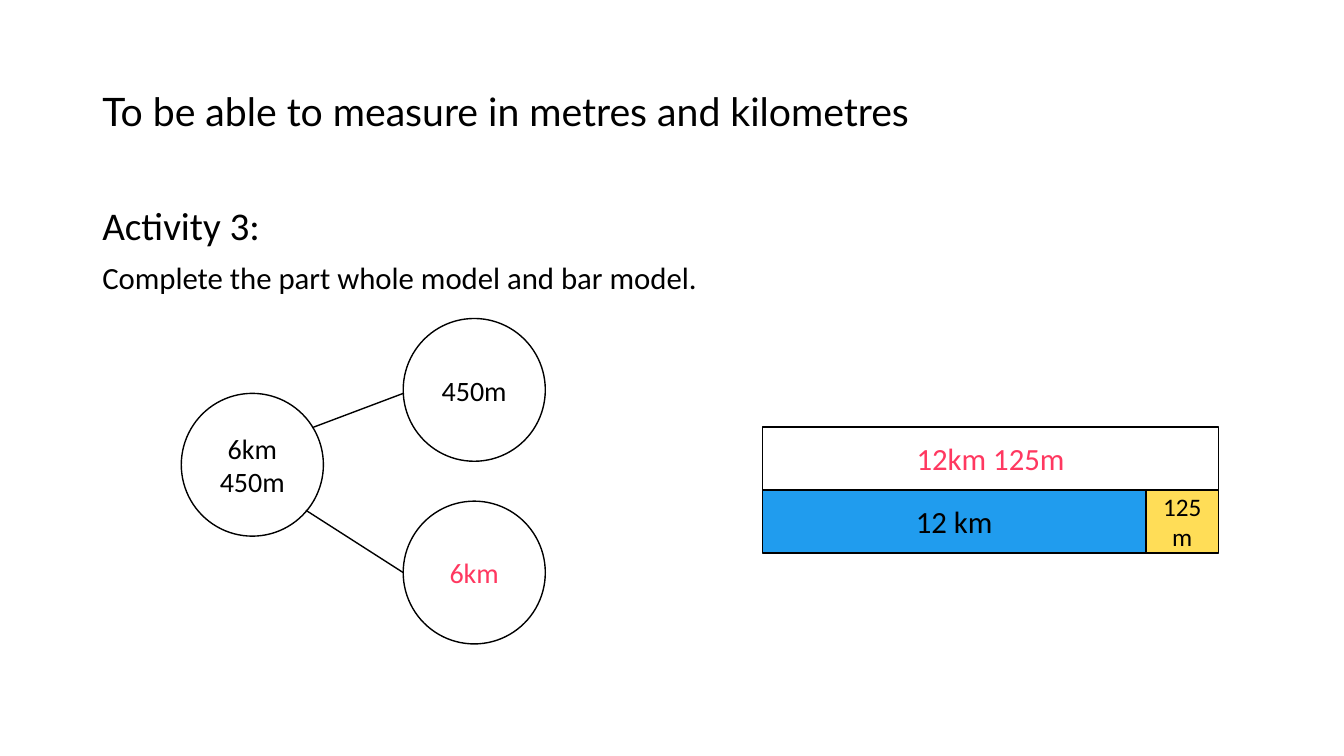
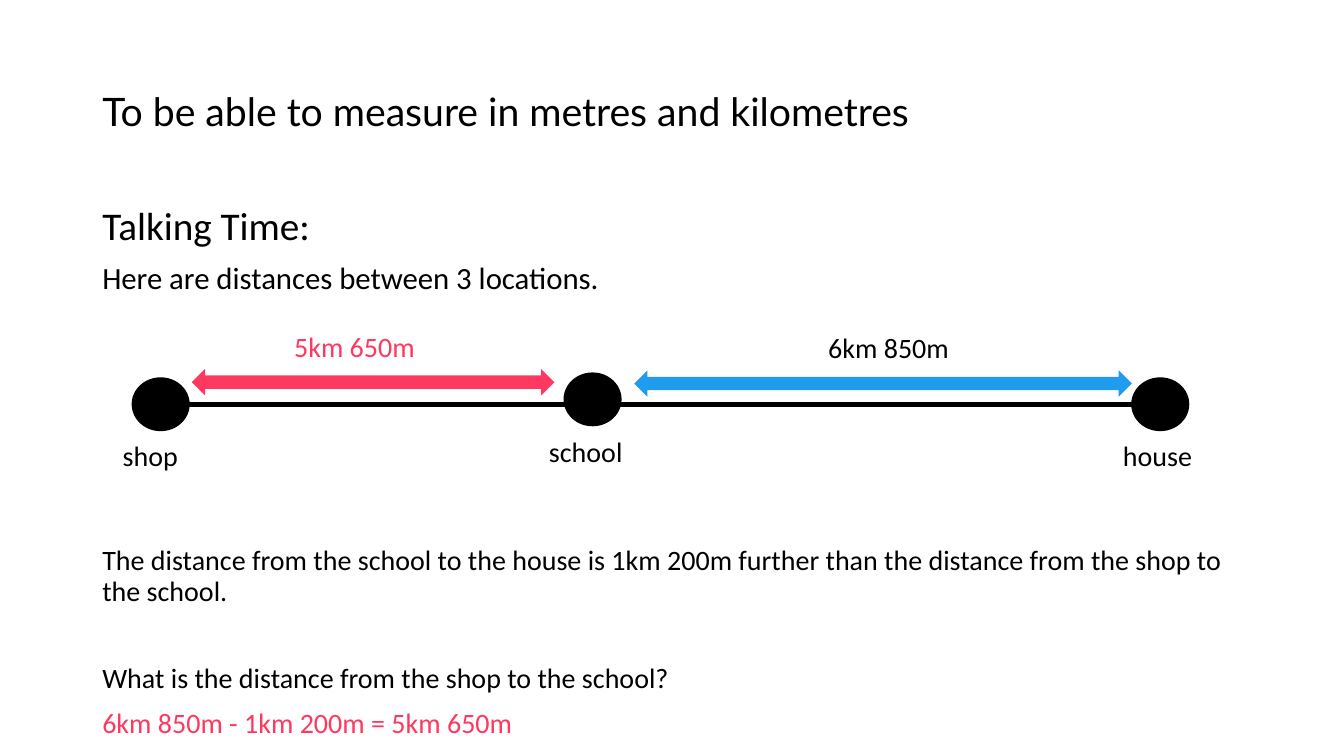
from pptx import Presentation
from pptx.dml.color import RGBColor
from pptx.enum.shapes import MSO_CONNECTOR, MSO_SHAPE as SHAPE
from pptx.enum.text import MSO_ANCHOR as ANCHOR, PP_ALIGN as ALIGN
from pptx.oxml.ns import qn
from pptx.util import Pt
from lxml import etree

BLACK = RGBColor(0x00, 0x00, 0x00)
WHITE = RGBColor(0xFF, 0xFF, 0xFF)
PINK = RGBColor(0xFF, 0x38, 0x60)
BLUE = RGBColor(0x20, 0x9C, 0xEE)
YELLOW = RGBColor(0xFF, 0xDD, 0x57)
TITLE_FONT, BODY_FONT = "Lato", "Calibri"
MARGIN = 66

# Content: paragraphs are (text, size, colour, space before)
TITLE = "To be able to measure in metres and kilometres"
ACTIVITY = [("Activity 3:", 28, BLACK, 0),
            ("Complete the part whole model and bar model.", 22, BLACK, 10)]
TALKING = [("Talking Time:", 28, BLACK, 0),
           ("Here are distances between 3 locations.", 22, BLACK, 10)]
QUESTION = [("The distance from the school to the house is 1km 200m further than "
             "the distance from the shop to the school.", 20, BLACK, 0),
            ("What is the distance from the shop to the school?", 20, BLACK, 41),
            ("6km 850m - 1km 200m = 5km 650m", 20, PINK, 10)]

# Part whole model: text, colour, left, top
CIRCLE_W, CIRCLE_H = 101.5, 102
CIRCLES = [("6km 450m", BLACK, 129.5, 281),
           ("450m", BLACK, 288, 227.5),
           ("6km", PINK, 288, 358)]
BRANCHES = [(223, 305.5, 288, 281), (288, 409, 218.5, 364.5)]

# Bar model: rows of (text, size, text colour, fill, width)
BAR_LEFT, BAR_TOP, BAR_H = 544.5, 305, 45
BAR_ROWS = [[("12km 125m", 22, PINK, WHITE, 326)],
            [("12 km", 22, BLACK, BLUE, 274), ("125m", 18, BLACK, YELLOW, 52)]]

# Route: place, dot left, dot top, label left, label width
DOT_W, DOT_H, LABEL_DROP, LABEL_H = 40.5, 37.5, 40, 31.5
ROAD = (115, 289, 824.5, 289)
PLACES = [("shop", 94.5, 270, 80.5, 68),
          ("house", 808.5, 270, 795, 75),
          ("school", 403, 266.5, 385, 84)]
# Distance, text colour, fill, arrow left, arrow top, arrow width, label left
ARROW_H, LABEL_RISE, DISTANCE_W = 19, 32, 154
DISTANCES = [("6km 850m", BLACK, BLUE, 453, 264.5, 355.5, 584.5),
             ("5km 650m", PINK, PINK, 137, 263.5, 259, 203)]


def write(frame, paragraphs, font=BODY_FONT, align=ALIGN.LEFT, spacing=None):
    frame.word_wrap = True
    for i, (text, size, colour, before) in enumerate(paragraphs):
        para = frame.add_paragraph() if i else frame.paragraphs[0]
        para.text = text
        para.alignment = align
        para.space_before = Pt(before)
        if spacing:
            para.line_spacing = spacing
        run_font = para.runs[0].font
        run_font.name, run_font.size = font, Pt(size)
        run_font.color.rgb = colour


def add_text(slide, paragraphs, left, top, width, height,
             anchor=ANCHOR.TOP, **style):
    box = slide.shapes.add_textbox(Pt(left), Pt(top), Pt(width), Pt(height))
    box.text_frame.vertical_anchor = anchor
    write(box.text_frame, paragraphs, **style)


def add_figure(slide, kind, left, top, width, height, fill, line=BLACK, label=None):
    figure = slide.shapes.add_shape(kind, Pt(left), Pt(top), Pt(width), Pt(height))
    figure.shadow.inherit = False
    figure.fill.solid()
    figure.fill.fore_color.rgb = fill
    if line is None:
        figure.line.fill.background()
    else:
        figure.line.color.rgb = line
        figure.line.width = Pt(1)
    if label:
        figure.text_frame.vertical_anchor = ANCHOR.MIDDLE
        write(figure.text_frame, [label], align=ALIGN.CENTER)


def add_line(slide, ends, width):
    line = slide.shapes.add_connector(MSO_CONNECTOR.STRAIGHT, *map(Pt, ends))
    line.line.color.rgb = BLACK
    line.line.width = Pt(width)
    etree.SubElement(line._element.spPr, qn("a:effectLst"))


def add_lesson_slide(prs, intro):
    slide = prs.slides.add_slide(prs.slide_layouts[6])
    add_text(slide, [(TITLE, 28, BLACK, 0)], MARGIN, 29, 691, 104.5,
             anchor=ANCHOR.MIDDLE, font=TITLE_FONT, spacing=0.9)
    add_text(slide, intro, MARGIN, 144, 828, 75, spacing=0.9)
    return slide


def build_models(prs):
    slide = add_lesson_slide(prs, ACTIVITY)
    # Bar model
    for row, bars in enumerate(BAR_ROWS):
        left = BAR_LEFT
        for text, size, colour, fill, width in bars:
            add_figure(slide, SHAPE.RECTANGLE, left, BAR_TOP + row * BAR_H,
                       width, BAR_H, fill, label=(text, size, colour, 0))
            left += width
    # Part whole model
    for text, colour, left, top in CIRCLES:
        add_figure(slide, SHAPE.OVAL, left, top, CIRCLE_W, CIRCLE_H, WHITE,
                   label=(text, 20, colour, 0))
    for ends in BRANCHES:
        add_line(slide, ends, 1)


def build_route(prs):
    slide = add_lesson_slide(prs, TALKING)
    add_text(slide, QUESTION, MARGIN, 387, 834.5, 140, spacing=0.9)
    # Road with its places
    add_line(slide, ROAD, 3)
    for place, left, top, label_left, label_width in PLACES:
        add_figure(slide, SHAPE.OVAL, left, top, DOT_W, DOT_H, BLACK)
        add_text(slide, [(place, 20, BLACK, 0)], label_left, top + LABEL_DROP,
                 label_width, LABEL_H)
    # Distances
    for text, colour, fill, left, top, width, label_left in DISTANCES:
        add_figure(slide, SHAPE.LEFT_RIGHT_ARROW, left, top, width, ARROW_H,
                   fill, line=None)
        add_text(slide, [(text, 20, colour, 0)], label_left, top - LABEL_RISE,
                 DISTANCE_W, LABEL_H)


def main():
    prs = Presentation()
    prs.slide_width, prs.slide_height = Pt(960), Pt(540)
    build_models(prs)
    build_route(prs)
    prs.save("out.pptx")


if __name__ == "__main__":
    main()
